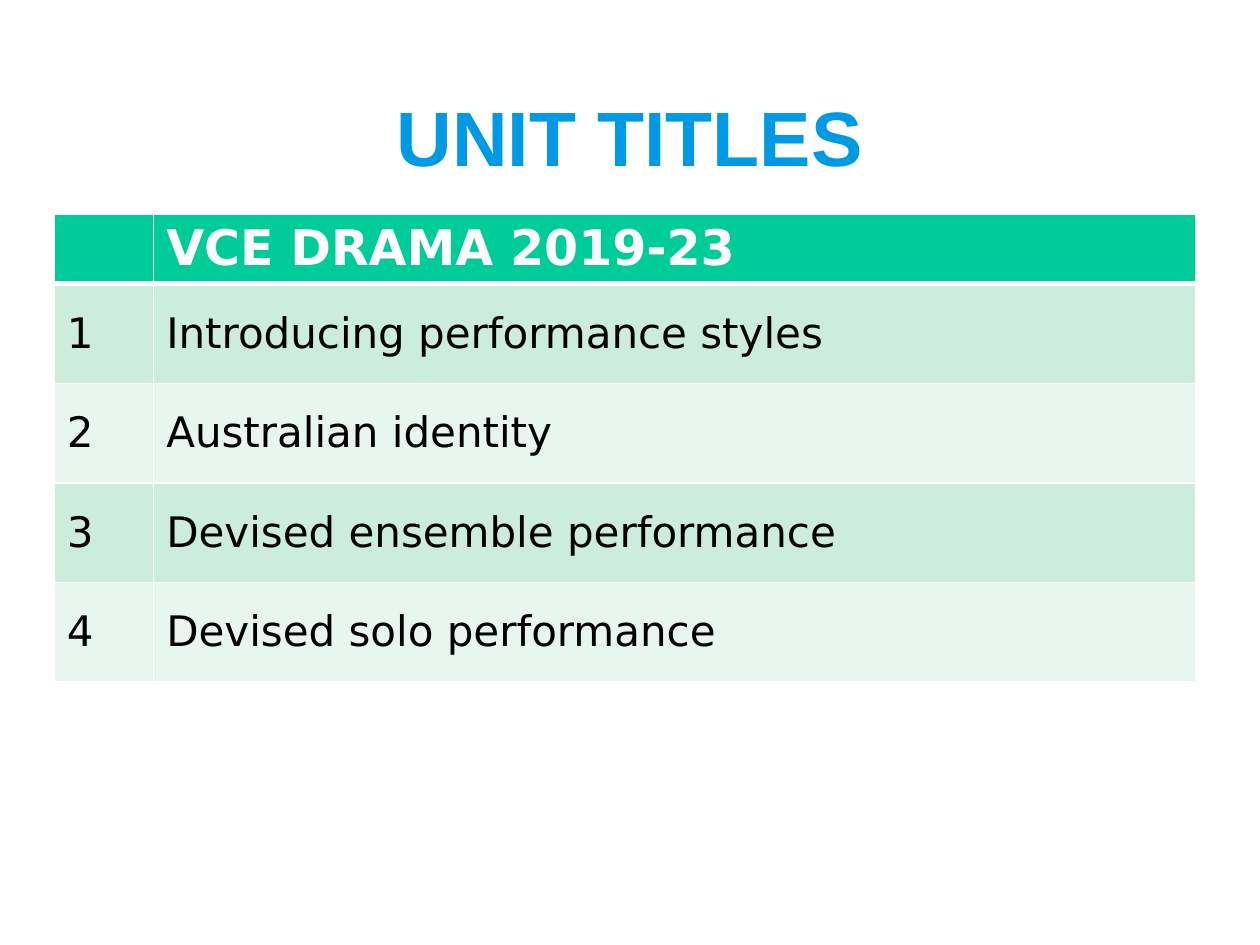
from lxml.etree import SubElement
from pptx import Presentation
from pptx.dml.color import RGBColor
from pptx.enum.text import MSO_ANCHOR as ANCHOR, PP_ALIGN as ALIGN
from pptx.oxml.ns import qn
from pptx.util import Inches, Pt

# Content
TITLE = "UNIT TITLES"
UNITS = [
    ("", "VCE DRAMA 2019-23"),
    ("1", "Introducing performance styles"),
    ("2", "Australian identity"),
    ("3", "Devised ensemble performance"),
    ("4", "Devised solo performance"),
]

# Layout, in inches
TITLE_BOX = (0.5, 0.6, 9, 0.95)
TABLE_LEFT, TABLE_TOP = 0.43, 1.7
COLUMNS = (0.79, 8.27)
HEADER_HEIGHT, ROW_HEIGHT = 0.55, 0.79

# Style
BLUE = RGBColor(0x00, 0x99, 0xE3)
GREEN = RGBColor(0x00, 0xCC, 0x99)
BANDS = (RGBColor(0xCC, 0xEC, 0xDE), RGBColor(0xE7, 0xF6, 0xEF))
WHITE = RGBColor(0xFF, 0xFF, 0xFF)
BLACK = RGBColor(0x00, 0x00, 0x00)


def write(tf, text, size=24, font="DejaVu Sans", color=BLACK, bold=False,
          align=ALIGN.LEFT, anchor=ANCHOR.MIDDLE):
    tf.word_wrap = True
    tf.vertical_anchor = anchor
    p = tf.paragraphs[0]
    p.alignment = align
    if text:
        r = p.add_run()
        r.text = text
        r.font.size, r.font.name, r.font.bold = Pt(size), font, bold
        r.font.color.rgb = color


def paint(cell, fill, top=1, bottom=1):
    """Fill a cell and give it white borders."""
    tc_pr = cell._tc.get_or_add_tcPr()
    for side, width in (("L", 1), ("R", 1), ("T", top), ("B", bottom)):
        ln = SubElement(tc_pr, qn(f"a:ln{side}"), w=str(Pt(width)))
        solid = SubElement(ln, qn("a:solidFill"))
        SubElement(solid, qn("a:srgbClr"), val=str(WHITE))
    cell.fill.solid()
    cell.fill.fore_color.rgb = fill


prs = Presentation()
prs.slide_width, prs.slide_height = Inches(10), Inches(7.5)
s = prs.slides.add_slide(prs.slide_layouts[5])

# Title
title = s.shapes.title
title.left, title.top, title.width, title.height = map(Inches, TITLE_BOX)
write(title.text_frame, TITLE, size=44, font="Arial", color=BLUE, bold=True,
      align=ALIGN.CENTER)

# Table of units
heights = [HEADER_HEIGHT] + [ROW_HEIGHT] * (len(UNITS) - 1)
table = s.shapes.add_table(
    len(UNITS), len(COLUMNS), Inches(TABLE_LEFT), Inches(TABLE_TOP),
    Inches(sum(COLUMNS)), Inches(sum(heights))).table
for column, width in zip(table.columns, COLUMNS):
    column.width = Inches(width)
for i, (unit, height) in enumerate(zip(UNITS, heights)):
    table.rows[i].height = Inches(height)
    for j, text in enumerate(unit):
        cell = table.cell(i, j)
        if i == 0:
            paint(cell, GREEN, bottom=3)
            write(cell.text_frame, text, size=28, color=WHITE, bold=True,
                  anchor=ANCHOR.TOP)
        else:
            paint(cell, BANDS[(i - 1) % 2], top=3 if i == 1 else 1)
            write(cell.text_frame, text)
            cell.vertical_anchor = ANCHOR.MIDDLE

prs.save("out.pptx")
